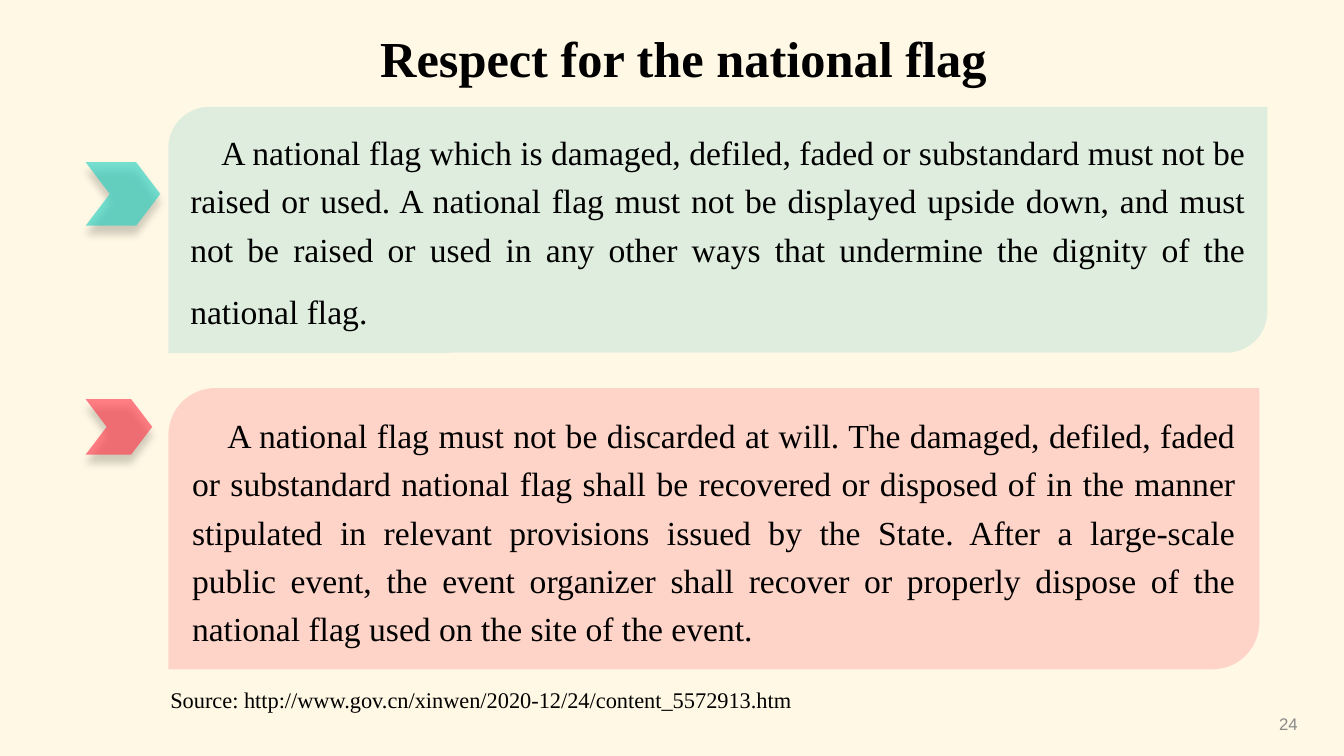
from dataclasses import dataclass

from lxml import etree
from pptx import Presentation
from pptx.dml.color import RGBColor
from pptx.enum import shapes, text
from pptx.oxml import ns
from pptx.util import Inches, Pt


@dataclass(frozen=True)
class Theme:
    cream: str = "FFF8E5"
    ink: str = "000000"
    grey: str = "898989"
    teal: str = "51BDC2"
    turquoise: str = "21D0C2"
    red: str = "FF3447"
    serif: str = "Times New Roman"
    sans: str = "Arial"
    title_size: int = 36
    body_size: int = 24
    last_line_size: int = 32
    source_size: int = 16
    number_size: int = 12
    panel_opacity: int = 18
    marker_opacity: int = 62
    shadow_opacity: int = 30


def add_alpha(color, percent):
    etree.SubElement(color, ns.qn("a:alpha"), val=str(percent * 1000))


class FlagSlide:
    def __init__(self, deck, theme):
        self.theme = theme
        self.slide = deck.slides.add_slide(deck.slide_layouts[5])
        background = self.slide.background.fill
        background.solid()
        background.fore_color.rgb = RGBColor.from_string(theme.cream)

    def style(self, run, size, face=None, color=None, bold=False):
        run.font.size = Pt(size)
        run.font.name = face or self.theme.serif
        run.font.color.rgb = RGBColor.from_string(color or self.theme.ink)
        run.font.bold = bold

    def title(self, words, left, top, width, height):
        heading = self.slide.shapes.title
        heading.left, heading.top = Inches(left), Inches(top)
        heading.width, heading.height = Inches(width), Inches(height)
        frame = heading.text_frame
        frame.text = words
        frame.word_wrap = True
        frame.auto_size = text.MSO_AUTO_SIZE.NONE
        frame.vertical_anchor = text.MSO_ANCHOR.TOP
        line = frame.paragraphs[0]
        line.alignment = text.PP_ALIGN.CENTER
        line.line_spacing = 0.9
        self.style(line.runs[0], self.theme.title_size, bold=True)

    def tinted(self, kind, left, top, width, height, color, opacity):
        """Add a borderless shape with a translucent fill."""
        shape = self.slide.shapes.add_shape(
            kind, Inches(left), Inches(top), Inches(width), Inches(height))
        shape.shadow.inherit = False
        shape.line.fill.background()
        shape.fill.solid()
        shape.fill.fore_color.rgb = RGBColor.from_string(color)
        add_alpha(shape.fill._xPr.find(".//" + ns.qn("a:srgbClr")), opacity)
        return shape

    def marker(self, left, top, width, height, color):
        """Add a chevron that casts a soft shadow downwards."""
        chevron = self.tinted(shapes.MSO_SHAPE.CHEVRON, left, top, width, height,
                              color, self.theme.marker_opacity)
        chevron.adjustments[0] = 0.38
        effects = chevron._element.spPr.find(ns.qn("a:effectLst"))
        shadow = etree.SubElement(
            effects, ns.qn("a:outerShdw"), blurRad=str(Pt(6)), dist=str(Pt(6)),
            dir="5400000", algn="t", rotWithShape="0")
        black = etree.SubElement(shadow, ns.qn("a:srgbClr"), val=self.theme.ink)
        add_alpha(black, self.theme.shadow_opacity)

    def panel(self, words, left, top, width, height, color, indent, tall_end=False):
        """Add a rounded panel; tall_end makes its last line higher."""
        panel = self.tinted(shapes.MSO_SHAPE.ROUND_2_DIAG_RECTANGLE, left, top,
                            width, height, color, self.theme.panel_opacity)
        frame = panel.text_frame
        frame.text = words
        frame.word_wrap = True
        frame.vertical_anchor = text.MSO_ANCHOR.TOP
        rule = frame.paragraphs[0]
        rule.alignment = text.PP_ALIGN.JUSTIFY
        rule.line_spacing = 1.2
        rule._p.get_or_add_pPr().set("indent", str(Inches(indent)))
        self.style(rule.runs[0], self.theme.body_size)
        if tall_end:
            end = rule.add_run()
            end.text = " "
            self.style(end, self.theme.last_line_size)

    def label(self, words, left, top, width, height, size, face, color,
              alignment=text.PP_ALIGN.LEFT, anchor=text.MSO_ANCHOR.TOP):
        box = self.slide.shapes.add_textbox(
            Inches(left), Inches(top), Inches(width), Inches(height))
        frame = box.text_frame
        frame.text = words
        frame.word_wrap = True
        frame.vertical_anchor = anchor
        frame.paragraphs[0].alignment = alignment
        self.style(frame.paragraphs[0].runs[0], size, face, color)


def main():
    deck = Presentation()
    deck.slide_width, deck.slide_height = Inches(13.33), Inches(7.5)
    theme = Theme()
    page = FlagSlide(deck, theme)

    page.title("Respect for the national flag", 3.23, 0.29, 7.1, 0.6)

    page.marker(0.85, 1.61, 0.74, 0.63, theme.turquoise)
    page.panel(
        "A national flag which is damaged, defiled, faded or substandard must not "
        "be raised or used. A national flag must not be displayed upside down, and "
        "must not be raised or used in any other ways that undermine the dignity "
        "of the national flag.",
        1.67, 1.06, 10.9, 2.44, theme.teal, indent=0.31, tall_end=True)

    page.marker(0.85, 3.96, 0.66, 0.55, theme.red)
    page.panel(
        "A national flag must not be discarded at will. The damaged, defiled, faded "
        "or substandard national flag shall be recovered or disposed of in the "
        "manner stipulated in relevant provisions issued by the State. After a "
        "large-scale public event, the event organizer shall recover or properly "
        "dispose of the national flag used on the site of the event.",
        1.67, 3.85, 10.82, 2.79, theme.red, indent=0.35)

    page.label("Source: http://www.gov.cn/xinwen/2020-12/24/content_5572913.htm",
               1.59, 6.76, 6.45, 0.37, theme.source_size, theme.serif, theme.ink)
    page.label("24", 9.97, 6.98, 3, 0.4, theme.number_size, theme.sans, theme.grey,
               text.PP_ALIGN.RIGHT, text.MSO_ANCHOR.MIDDLE)

    deck.save("out.pptx")


if __name__ == "__main__":
    main()
